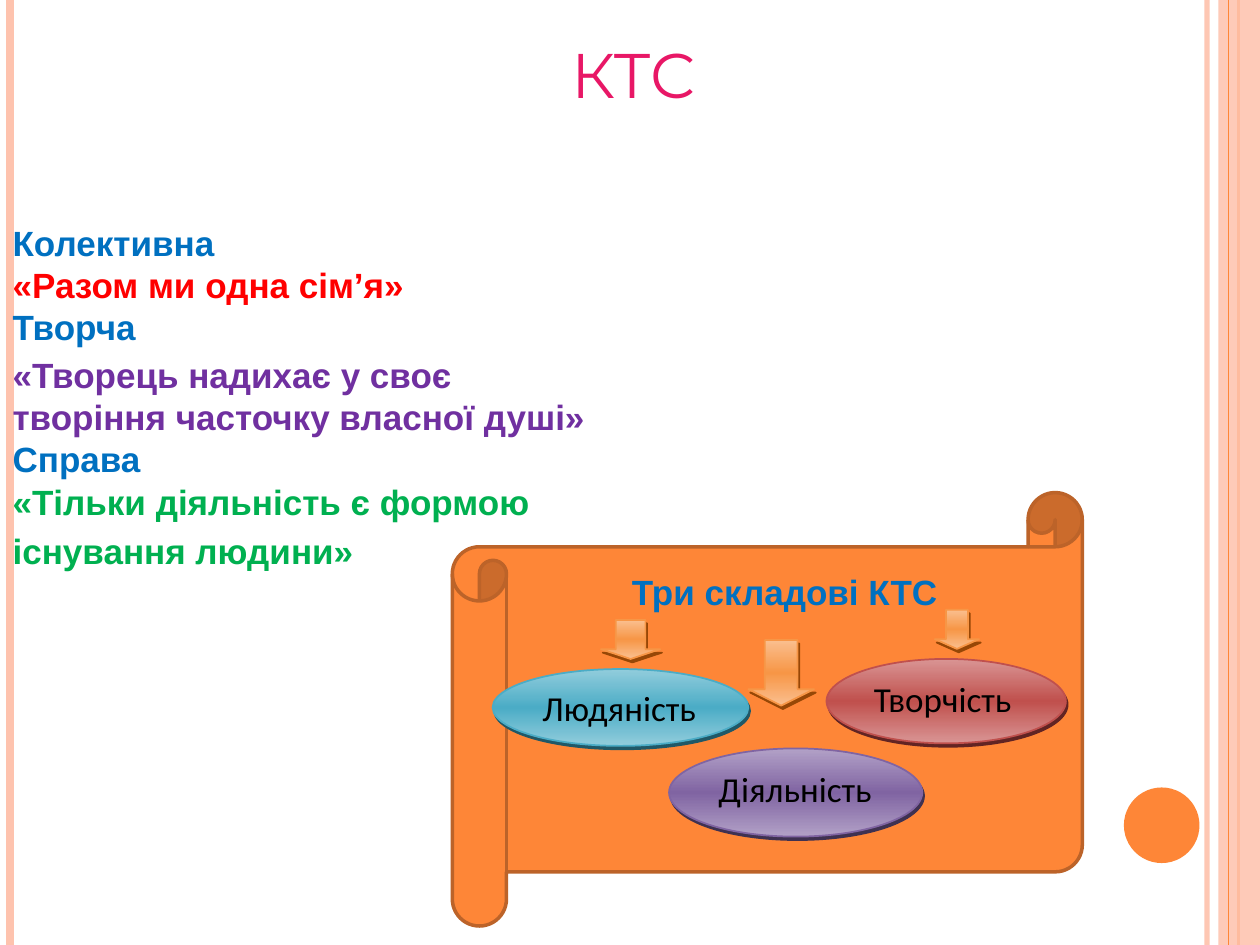
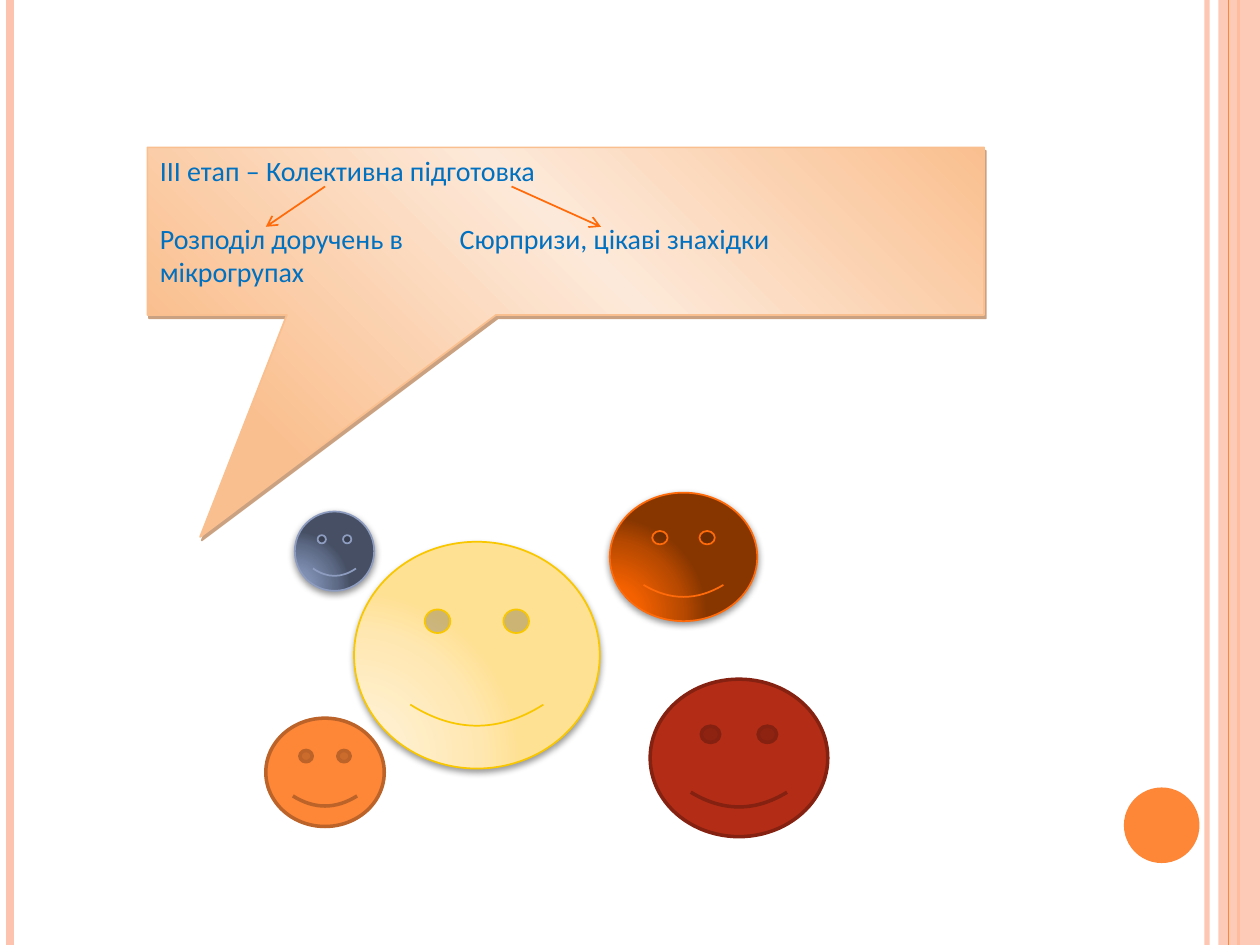
from lxml import etree
from pptx import Presentation, util as u
from pptx.dml.color import RGBColor
from pptx.enum import shapes, text
from pptx.oxml import ns, parse_xml

# Theme colours
PEACH = RGBColor(0xFE, 0xC3, 0xAE)
ORANGE = RGBColor(0xFE, 0x86, 0x37)
DARK_ORANGE = RGBColor(0xBC, 0x63, 0x29)
BRIGHT_ORANGE = RGBColor(0xFF, 0x6B, 0x0A)
PINK = RGBColor(0xE8, 0x17, 0x66)
BLUE = RGBColor(0x00, 0x70, 0xC0)
RED = RGBColor(0xFF, 0x00, 0x00)
PURPLE = RGBColor(0x70, 0x30, 0xA0)
GREEN = RGBColor(0x00, 0xB0, 0x50)
BLACK = RGBColor(0x00, 0x00, 0x00)
BRICK = RGBColor(0xB3, 0x2C, 0x16)
DARK_BRICK = RGBColor(0x84, 0x21, 0x10)
YELLOW = RGBColor(0xF8, 0xC7, 0x00)
SLATE = RGBColor(0x8D, 0x9C, 0xBF)
AQUA = RGBColor(0x4B, 0xAC, 0xC6)
LIGHT_AQUA = RGBColor(0x92, 0xCD, 0xDC)
DEEP_AQUA = RGBColor(0x20, 0x58, 0x67)
VIOLET = RGBColor(0x80, 0x64, 0xA2)
LIGHT_VIOLET = RGBColor(0xB2, 0xA1, 0xC7)
DEEP_VIOLET = RGBColor(0x3F, 0x31, 0x51)
ROSE = RGBColor(0xC0, 0x50, 0x4D)
LIGHT_ROSE = RGBColor(0xD9, 0x95, 0x94)
DEEP_ROSE = RGBColor(0x62, 0x24, 0x23)
AMBER = RGBColor(0xF7, 0x96, 0x46)
LIGHT_AMBER = RGBColor(0xFA, 0xBF, 0x8F)
PALE_AMBER = RGBColor(0xFD, 0xE9, 0xD9)
DEEP_AMBER = RGBColor(0x97, 0x47, 0x06)

# Radial fills of the shaded faces, from the highlight outwards
FACE_STOPS = (0, 30, 75, 100)
YELLOW_FACE = ("FFF0D1", "FFEFCC", "FFE7B1", "FFE193")
ORANGE_FACE = ("FD6400", "F46100", "B74900", "873600")
SLATE_FACE = ("8494B9", "7F8FB2", "5E6B87", "464F64")

HEIGHT = 7.5
RIGHT = text.PP_ALIGN.RIGHT


# Formatting helpers
def add_child(parent, tag, **attributes):
    child = etree.SubElement(parent, ns.qn(tag))
    for name, value in attributes.items():
        child.set(name, str(value))
    return child


def set_alpha(element, percent):
    color = next(element.iter(ns.qn("a:srgbClr")))
    add_child(color, "a:alpha", val=percent * 1000)


def set_gradient(shape, stops, angle=None):
    """Linear fill at the given angle, or a radial one without an angle."""
    gradient = parse_xml(f'<a:gradFill {ns.nsdecls("a")} rotWithShape="1"/>')
    stop_list = add_child(gradient, "a:gsLst")
    for position, color in stops:
        stop = add_child(stop_list, "a:gs", pos=position * 1000)
        add_child(stop, "a:srgbClr", val=color)
    if angle is None:
        radial = add_child(gradient, "a:path", path="circle")
        add_child(radial, "a:fillToRect", l=5000, t=100000, r=120000, b=10000)
    else:
        add_child(gradient, "a:lin", ang=angle * 60000, scaled=0)
    shape.fill.gradient()
    properties = shape.element.spPr
    properties.replace(properties.find(ns.qn("a:gradFill")), gradient)


def set_shadow(shape, color, alpha, blur, distance, angle):
    effects = shape.element.spPr.find(ns.qn("a:effectLst"))
    shadow = add_child(effects, "a:outerShdw", blurRad=u.Pt(blur), dist=u.Pt(distance),
                       dir=angle * 60000, algn="ctr", rotWithShape=0)
    add_child(shadow, "a:srgbClr", val=color)
    set_alpha(shadow, alpha)


def add_run(paragraph, words, font, size, color, bold=False):
    run = paragraph.add_run()
    run.text = words
    run.font.name = font
    run.font.size = u.Pt(size)
    run.font.bold = bold
    run.font.color.rgb = color


def place(shape, left, top, width, height):
    shape.left, shape.top = u.Inches(left), u.Inches(top)
    shape.width, shape.height = u.Inches(width), u.Inches(height)


# Element helpers
def add_preset(slide, kind, box, fill=None, line=None, line_width=1):
    shape = slide.shapes.add_shape(kind, *map(u.Inches, box))
    shape.shadow.inherit = False
    if fill is not None:
        shape.fill.solid()
        shape.fill.fore_color.rgb = fill
    if line is None:
        shape.line.fill.background()
    else:
        shape.line.color.rgb = line
        shape.line.width = u.Pt(line_width)
    return shape


def add_line(slide, start, end, color, width, arrow=False):
    line = slide.shapes.add_connector(shapes.MSO_CONNECTOR.STRAIGHT,
                                      *map(u.Inches, (*start, *end)))
    line.line.color.rgb = color
    line.line.width = u.Pt(width)
    if arrow:
        add_child(line.line._get_or_add_ln(), "a:tailEnd", type="arrow")
    add_child(line.element.spPr, "a:effectLst")
    return line


def add_glossy(slide, kind, box, light, middle, deep):
    shape = add_preset(slide, kind, box, line=middle)
    set_gradient(shape, ((0, light), (50, middle), (100, light)), angle=90)
    set_shadow(shape, deep, 100, 0, 2.2, 63)
    return shape


def add_component(slide, words, box, *colors):
    oval = add_glossy(slide, shapes.MSO_SHAPE.OVAL, box, *colors)
    frame = oval.text_frame
    frame.vertical_anchor = text.MSO_ANCHOR.TOP
    frame.word_wrap = True
    paragraph = frame.paragraphs[0]
    paragraph.alignment = text.PP_ALIGN.LEFT
    add_run(paragraph, words, "Calibri", 20, BLACK)


def add_face(slide, box, line, colors, shadow_alpha, shadow_distance):
    face = add_preset(slide, shapes.MSO_SHAPE.SMILEY_FACE, box, line=line)
    set_gradient(face, zip(FACE_STOPS, colors))
    set_shadow(face, BLACK, shadow_alpha, 4, shadow_distance, 90)


def add_frame_to_master(presentation, slide):
    """Draw the side bands and the corner disc, then move them to the master."""
    def band_line(x, color, width):
        return add_line(slide, (x, 0), (x, HEIGHT), color, width)

    inner = band_line(9.58, PEACH, 3)
    set_alpha(inner.element, 93)
    left = band_line(0.08, PEACH, 4.5)
    outer = band_line(9.83, ORANGE, 1.5)
    band = add_preset(slide, shapes.MSO_SHAPE.RECTANGLE, (9.67, 0, 0.33, HEIGHT), PEACH)
    set_alpha(band.element, 87)
    edge = band_line(9.75, ORANGE, 0.75)
    disc = add_preset(slide, shapes.MSO_SHAPE.OVAL, (8.92, 6.25, 0.6, 0.6), ORANGE)
    tree = presentation.slide_master.element.cSld.spTree
    for number, part in enumerate((inner, left, outer, band, edge, disc)):
        part.element.xpath(".//p:cNvPr")[0].set("id", str(100 + number))
        tree.insert(2 + number, part.element)


# Slide 1
def fill_title(slide):
    title = slide.shapes.title
    place(title, 3.83, 0.23, 2.39, 1.06)
    title.text_frame.vertical_anchor = text.MSO_ANCHOR.TOP
    paragraph = title.text_frame.paragraphs[0]
    paragraph.alignment = text.PP_ALIGN.CENTER
    add_run(paragraph, "КТС", "Montserrat", 36, PINK)


def fill_mottoes(slide):
    lines = (
        ("Колективна", BLUE, 0),
        ("«Разом ми одна сімʼя»", RED, 0),
        ("Творча", BLUE, 0),
        ("«Творець надихає у своє", PURPLE, 3),
        ("творіння часточку власної душі»", PURPLE, 0),
        ("Справа", BLUE, 0),
        ("«Тільки діяльність є формою", GREEN, 1),
        ("існування людини»", GREEN, 4),
    )
    body = slide.placeholders[1]
    place(body, 0, 1.71, 5, 2.9)
    frame = body.text_frame
    frame.auto_size = text.MSO_AUTO_SIZE.NONE
    for index, (words, color, gap) in enumerate(lines):
        paragraph = frame.add_paragraph() if index else frame.paragraphs[0]
        paragraph.line_spacing = u.Pt(24)
        paragraph.space_before = u.Pt(gap)
        properties = paragraph._p.get_or_add_pPr()
        properties.set("marL", "0")
        properties.set("indent", "0")
        add_child(properties, "a:buNone")
        add_run(paragraph, words, "Arial", 20, color, bold=True)


def add_components_scroll(slide):
    add_preset(slide, shapes.MSO_SHAPE.HORIZONTAL_SCROLL, (3.59, 3.91, 5, 3.44),
               ORANGE, DARK_ORANGE, 2)
    heading = slide.shapes.add_textbox(*map(u.Inches, (4.12, 4.48, 3.42, 0.44)))
    heading.text_frame.word_wrap = True
    paragraph = heading.text_frame.paragraphs[0]
    paragraph.alignment = RIGHT
    add_run(paragraph, "Три складові КТС", "Arial", 20, BLUE, bold=True)

    add_component(slide, "Людяність", (3.91, 5.31, 2.03, 0.61),
                  LIGHT_AQUA, AQUA, DEEP_AQUA)
    add_component(slide, "Діяльність", (5.31, 5.94, 2.01, 0.7),
                  LIGHT_VIOLET, VIOLET, DEEP_VIOLET)
    add_component(slide, "Творчість", (6.56, 5.23, 1.9, 0.67),
                  LIGHT_ROSE, ROSE, DEEP_ROSE)
    for box in ((4.77, 4.92, 0.47, 0.31), (5.94, 5.08, 0.52, 0.52), (7.42, 4.84, 0.35, 0.31)):
        arrow = add_glossy(slide, shapes.MSO_SHAPE.DOWN_ARROW, box,
                           LIGHT_AMBER, AMBER, DEEP_AMBER)
        arrow.adjustments[1] = 0.25


# Slide 2
def add_stage_callout(slide):
    callout = add_preset(slide, shapes.MSO_SHAPE.RECTANGULAR_CALLOUT,
                         (1.17, 1.17, 6.64, 1.33), line=LIGHT_AMBER)
    callout.adjustments[0], callout.adjustments[1] = -0.437, 1.825
    set_gradient(callout, ((0, LIGHT_AMBER), (50, PALE_AMBER), (100, LIGHT_AMBER)), angle=315)
    set_shadow(callout, DEEP_AMBER, 50, 0, 2.2, 63)
    frame = callout.text_frame
    frame.word_wrap = True
    frame.vertical_anchor = text.MSO_ANCHOR.TOP
    lines = (("ІІІ етап – Колективна підготовка", 0),
             ("Розподіл доручень в\tСюрпризи, цікаві знахідки", 19.5),
             ("мікрогрупах", 0))
    for index, (words, gap) in enumerate(lines):
        paragraph = frame.add_paragraph() if index else frame.paragraphs[0]
        paragraph.alignment = text.PP_ALIGN.LEFT
        paragraph.space_before = u.Pt(gap)
        tabs = add_child(paragraph._p.get_or_add_pPr(), "a:tabLst")
        add_child(tabs, "a:tab", pos=u.Inches(2.38), algn="l")
        add_run(paragraph, words, "Calibri", 16, BLUE)
    for start, end in (((2.58, 1.48), (2.11, 1.8)), ((4.06, 1.48), (4.77, 1.8))):
        add_line(slide, start, end, BRIGHT_ORANGE, 1, arrow=True)


def add_faces(slide):
    smiley = shapes.MSO_SHAPE.SMILEY_FACE
    add_face(slide, (2.81, 4.3, 1.95, 1.8), YELLOW, YELLOW_FACE, 40, 2)
    add_face(slide, (4.84, 3.91, 1.17, 1.02), BRIGHT_ORANGE, ORANGE_FACE, 42, 1.6)
    add_preset(slide, smiley, (5.16, 5.39, 1.41, 1.25), BRICK, DARK_BRICK, 2)
    add_preset(slide, smiley, (2.11, 5.7, 0.94, 0.86), ORANGE, DARK_ORANGE, 2)
    add_face(slide, (2.34, 4.06, 0.63, 0.63), SLATE, SLATE_FACE, 42, 1.6)


def main():
    presentation = Presentation()
    presentation.slide_width, presentation.slide_height = u.Inches(10), u.Inches(HEIGHT)
    title_and_list, blank = presentation.slide_layouts[1], presentation.slide_layouts[6]

    slide = presentation.slides.add_slide(title_and_list)
    add_frame_to_master(presentation, slide)
    fill_title(slide)
    fill_mottoes(slide)
    add_components_scroll(slide)

    slide = presentation.slides.add_slide(blank)
    add_stage_callout(slide)
    add_faces(slide)

    presentation.save("out.pptx")


if __name__ == "__main__":
    main()
